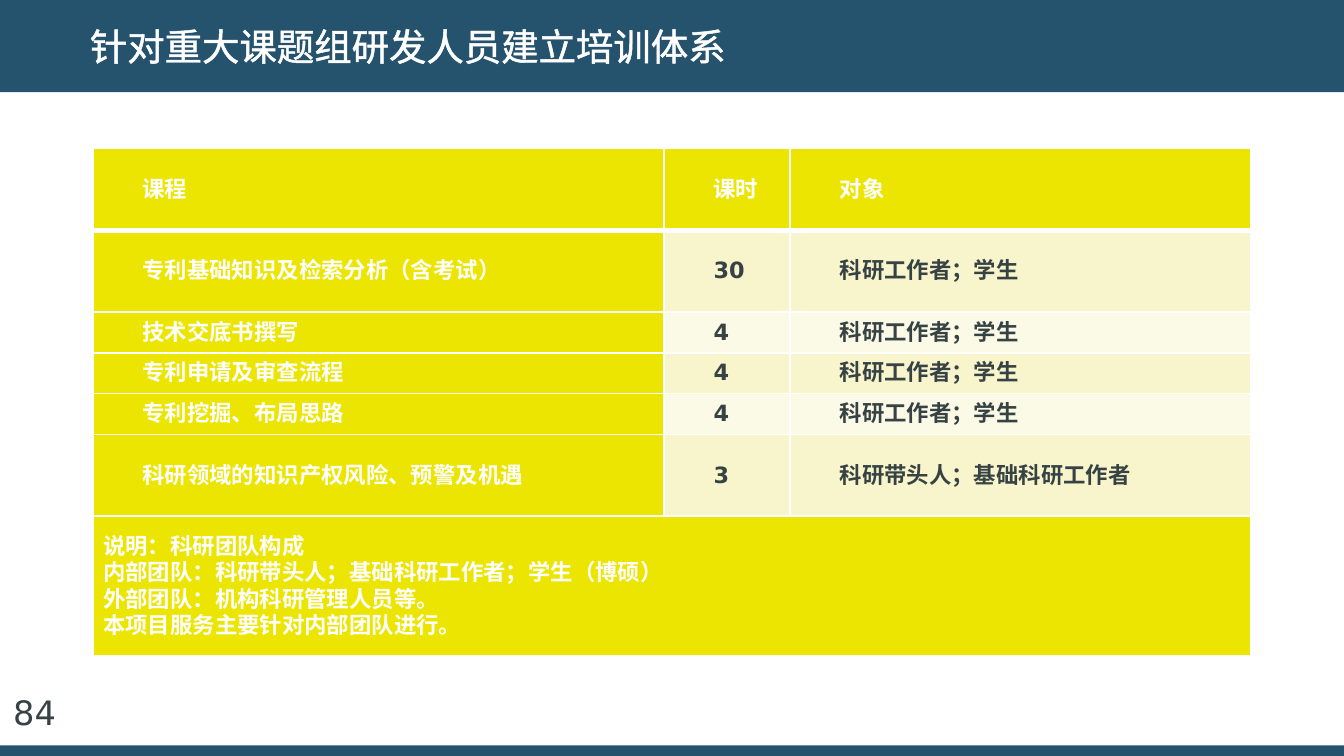
from lxml import etree
from pptx import Presentation
from pptx.dml.color import RGBColor
from pptx.enum.shapes import MSO_SHAPE
from pptx.enum.text import MSO_ANCHOR, PP_ALIGN
from pptx.oxml.ns import qn
from pptx.util import Pt

RECT = MSO_SHAPE.RECTANGLE
MIDDLE = MSO_ANCHOR.MIDDLE
LEFT, JUSTIFY = PP_ALIGN.LEFT, PP_ALIGN.JUSTIFY
FONT = "DejaVu Sans"
WHITE, NAVY, INK = "FFFFFF", "25536E", "364243"
YELLOW, BANDS = "ECE502", ("F8F5CC", "FBFAE7")
WIDTH, HEIGHT = 720, 405

COLS = (306, 67.6, 247)
TALL, SHORT, NOTE = 43.8, 21.9, 75
ROWS = (TALL, TALL, SHORT, SHORT, SHORT, TALL, NOTE)
COURSES = (
    ("课程", "课时", "对象"),
    ("专利基础知识及检索分析（含考试）", "30", "科研工作者；学生"),
    ("技术交底书撰写", "4", "科研工作者；学生"),
    ("专利申请及审查流程", "4", "科研工作者；学生"),
    ("专利挖掘、布局思路", "4", "科研工作者；学生"),
    ("科研领域的知识产权风险、预警及机遇", "3", "科研带头人；基础科研工作者"),
)
NOTES = """说明：科研团队构成
内部团队：科研带头人；基础科研工作者；学生（博硕）
外部团队：机构科研管理人员等。
本项目服务主要针对内部团队进行。"""


def rgb(code):
    return RGBColor.from_string(code)


def style(frame, size, color, bold=False, align=LEFT):
    for para in frame.paragraphs:
        para.alignment = align
        for run in para.runs:
            font = run.font
            font.size, font.bold, font.name = Pt(size), bold, FONT
            font.color.rgb = rgb(color)
            east = etree.SubElement(run._r.get_or_add_rPr(), qn("a:ea"))
            east.set("typeface", FONT)


def add_line(parent, tag, color, width):
    line = etree.Element(qn(tag), w=str(Pt(width)))
    fill = etree.SubElement(line, qn("a:solidFill"))
    etree.SubElement(fill, qn("a:srgbClr"), val=color)
    parent.append(line)
    return line


def add_bar(slide, left, top, width, height):
    bar = slide.shapes.add_shape(RECT, Pt(left), Pt(top), Pt(width), Pt(height))
    bar.shadow.inherit = False
    bar.fill.solid()
    bar.fill.fore_color.rgb = rgb(NAVY)
    bar.line.fill.background()
    slide.shapes._spTree.insert(2, bar._element)


def add_title(slide, left, top, width, height):
    title = slide.shapes.title
    title.left, title.top = Pt(left), Pt(top)
    title.width, title.height = Pt(width), Pt(height)
    frame = title.text_frame
    frame.text = "针对重大课题组研发人员建立培训体系"
    frame.vertical_anchor = MIDDLE
    style(frame, 20, WHITE)
    props = frame.paragraphs[0].runs[0]._r.get_or_add_rPr()
    props.insert(0, add_line(props, "a:ln", WHITE, 0.25))


def fill_cell(cell, text, fill, color, indent, top, bottom):
    cell.text = text
    cell.vertical_anchor = MIDDLE
    cell.margin_left = cell.margin_right = Pt(5.6)
    cell.margin_top = cell.margin_bottom = 0
    style(cell.text_frame, 12, color, True, JUSTIFY)
    for para in cell.text_frame.paragraphs:
        props = para._p.get_or_add_pPr()
        props.set("marL", "0")
        props.set("indent", str(Pt(indent)))
    props = cell._tc.get_or_add_tcPr()
    for side, width in zip("LRTB", (1, 1, top, bottom)):
        add_line(props, f"a:ln{side}", WHITE, width)
    cell.fill.solid()
    cell.fill.fore_color.rgb = rgb(fill)


def add_plan(slide, left, top, width, height):
    table = slide.shapes.add_table(
        len(ROWS), len(COLS), Pt(left), Pt(top), Pt(width), Pt(height)
    ).table
    table.horz_banding = False
    for col, size in zip(table.columns, COLS):
        col.width = Pt(size)
    for row, size in zip(table.rows, ROWS):
        row.height = Pt(size)
    for r, course in enumerate(COURSES):
        for c, text in enumerate(course):
            key = r == 0 or c == 0
            fill = YELLOW if key else BANDS[(r - 1) % 2]
            fill_cell(table.cell(r, c), text, fill, WHITE if key else INK,
                      21, 3 if r == 1 else 1, 3 if r == 0 else 1)
    last = len(ROWS) - 1
    table.cell(last, 0).merge(table.cell(last, len(COLS) - 1))
    fill_cell(table.cell(last, 0), NOTES, YELLOW, WHITE, 0, 1, 1)


def add_number(slide, left, top, width, height):
    box = slide.shapes.add_textbox(Pt(left), Pt(top), Pt(width), Pt(height))
    box.text_frame.word_wrap = True
    box.text_frame.text = "84"
    style(box.text_frame, 18, INK)


def main():
    deck = Presentation()
    deck.slide_width, deck.slide_height = Pt(WIDTH), Pt(HEIGHT)
    slide = deck.slides.add_slide(deck.slide_layouts[5])
    add_bar(slide, 0, 0, WIDTH, 49.4)
    add_bar(slide, 0, HEIGHT - 5.6, WIDTH, 5.6)
    add_title(slide, 41, 7.2, 638, 34.6)
    add_plan(slide, 49.7, 79.5, sum(COLS), sum(ROWS))
    add_number(slide, 0, 367.2, 51.8, 14.4)
    deck.save("out.pptx")


if __name__ == "__main__":
    main()
